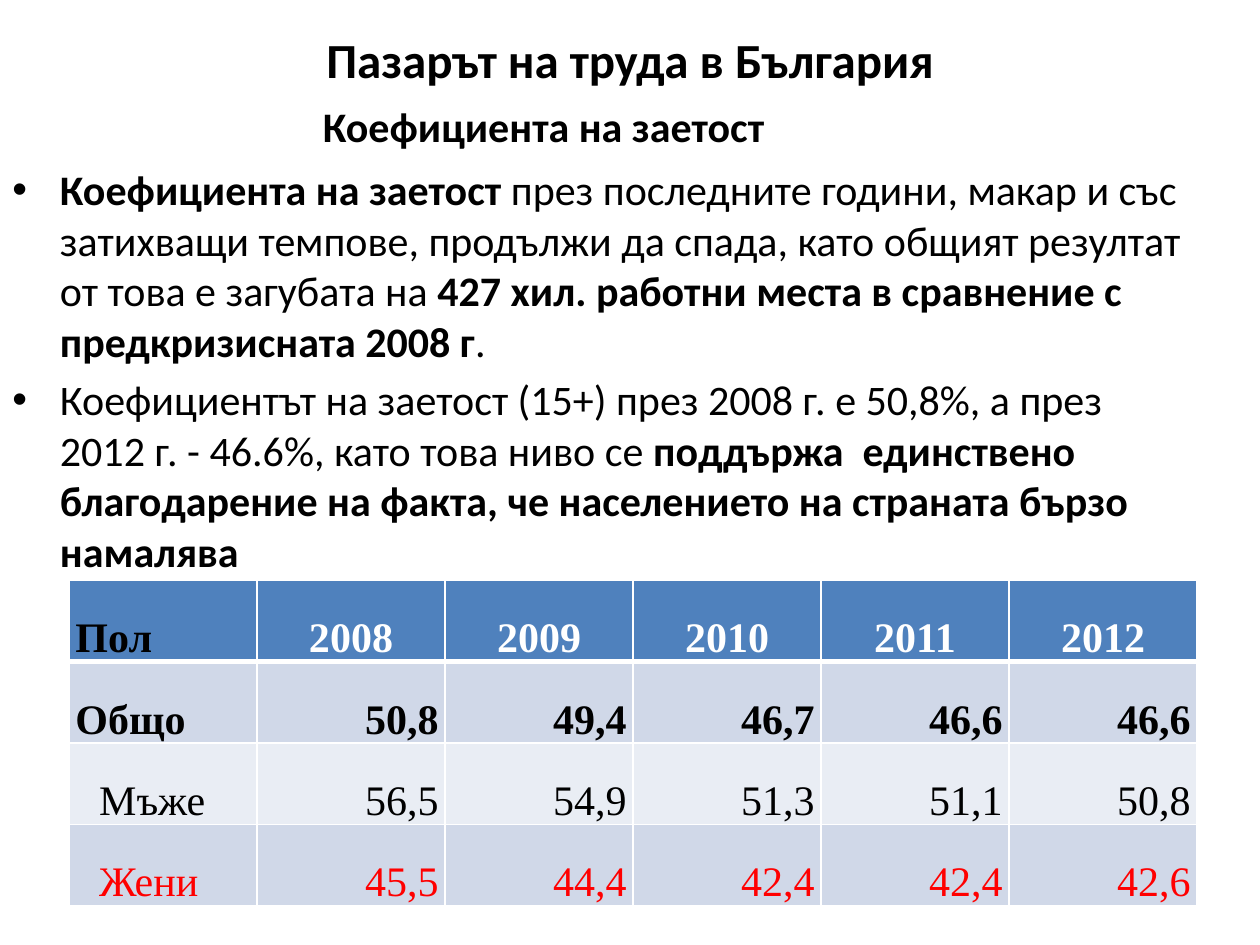
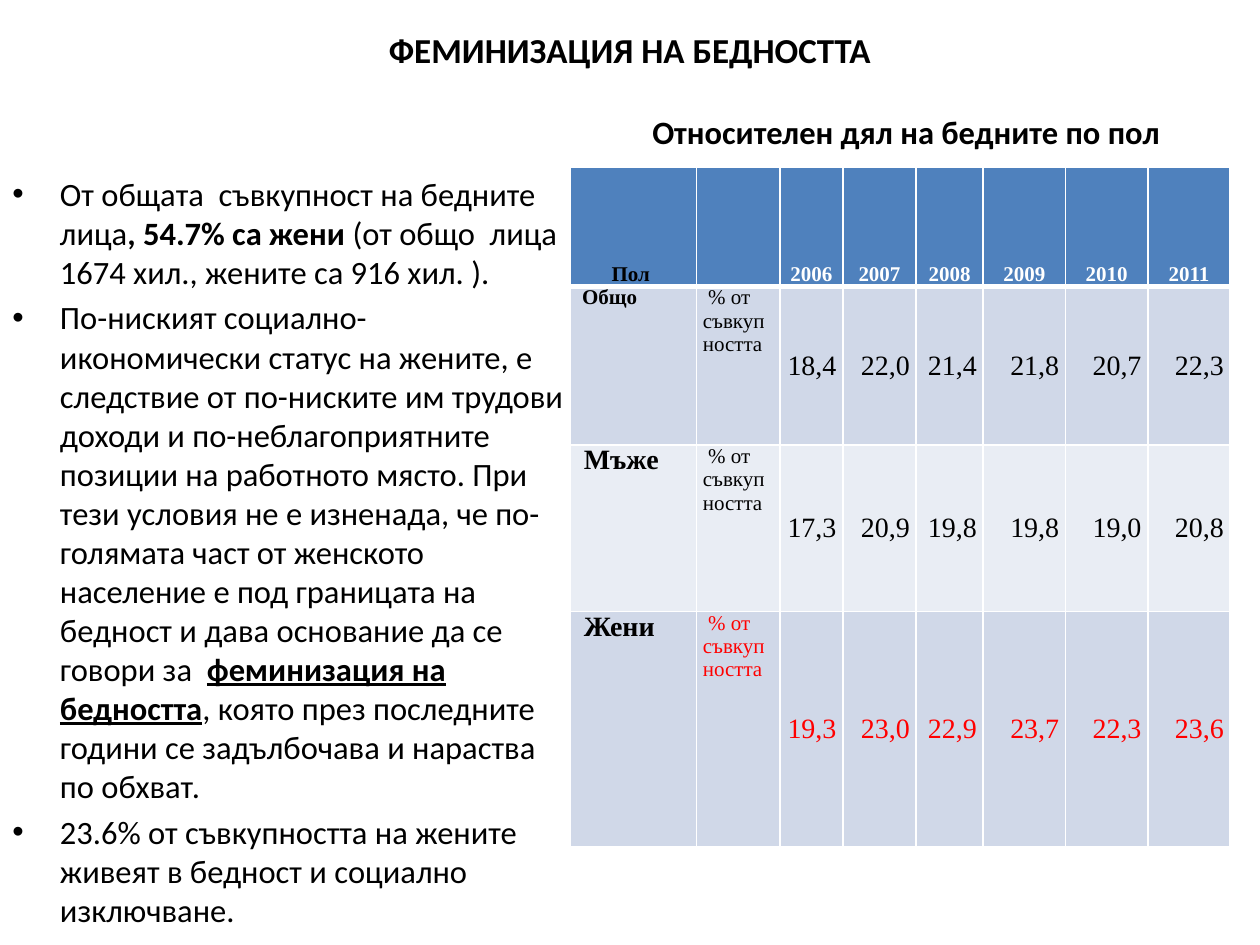
"""Build two slides on the Bulgarian labour market and poverty by sex."""
from dataclasses import dataclass

from lxml.etree import SubElement
from pptx import Presentation
from pptx.dml.color import RGBColor
from pptx.enum.text import MSO_ANCHOR, PP_ALIGN
from pptx.oxml.ns import qn
from pptx.util import Cm, Pt


@dataclass(frozen=True)
class Theme:
    text: RGBColor = RGBColor(0, 0, 0)
    header_text: RGBColor = RGBColor(255, 255, 255)
    women: RGBColor = RGBColor(255, 0, 0)
    header_fill: RGBColor = RGBColor(0x4F, 0x81, 0xBD)
    bands: tuple = (RGBColor(0xE9, 0xED, 0xF4), RGBColor(0xD0, 0xD8, 0xE8))
    border: str = "FFFFFF"
    text_font: str = "Calibri"
    table_font: str = "Times New Roman"
    title: float = 28
    large: float = 24
    small_title: float = 20
    medium: float = 18.6
    figures: float = 16
    labels: float = 12


theme = Theme()


def add_text(slide, box, size, paragraphs, anchor=MSO_ANCHOR.TOP,
             align=PP_ALIGN.LEFT, before=0, bulleted=False):
    frame = slide.shapes.add_textbox(*map(Cm, box)).text_frame
    frame.word_wrap = True
    frame.vertical_anchor = anchor
    for index, pieces in enumerate(paragraphs):
        paragraph = frame.add_paragraph() if index else frame.paragraphs[0]
        paragraph.alignment = align
        paragraph.space_before = Pt(before)
        for words, style in pieces:
            run = paragraph.add_run()
            run.text = words
            run.font.name, run.font.size = theme.text_font, Pt(size)
            run.font.color.rgb = theme.text
            run.font.bold = "b" in style
            run.font.underline = "u" in style
        if bulleted:
            properties = paragraph._p.get_or_add_pPr()
            properties.set("marL", str(Cm(0.96)))
            properties.set("indent", str(-Cm(0.96)))
            SubElement(properties, qn("a:buFont"), typeface="Arial")
            SubElement(properties, qn("a:buChar"), char="•")


def add_grid(slide, left, top, widths, heights, rows, size):
    grid = slide.shapes.add_table(len(rows), len(widths), Cm(left), Cm(top),
                                  Cm(sum(widths)), Cm(sum(heights))).table
    for column, width in zip(grid.columns, widths):
        column.width = Cm(width)
    for r, (values, height) in enumerate(zip(rows, heights)):
        grid.rows[r].height = Cm(height)
        for c, value in enumerate(values):
            cell = grid.cell(r, c)
            cell.margin_left = cell.margin_right = Cm(0.13)
            cell.margin_top = cell.margin_bottom = 0
            cell.vertical_anchor = MSO_ANCHOR.BOTTOM
            for side in ("L", "R", "T", "B"):
                under_header = (r, side) in ((0, "B"), (1, "T"))
                line = SubElement(cell._tc.get_or_add_tcPr(), qn(f"a:ln{side}"),
                                  w=str(Pt(3 if under_header else 1)))
                fill = SubElement(line, qn("a:solidFill"))
                SubElement(fill, qn("a:srgbClr"), val=theme.border)
            cell.fill.solid()
            cell.fill.fore_color.rgb = theme.bands[r % 2] if r else theme.header_fill
            cell.text_frame.text = value
            paragraph = cell.text_frame.paragraphs[0]
            if c:
                paragraph.alignment = PP_ALIGN.RIGHT if r else PP_ALIGN.CENTER
            for run in paragraph.runs:
                run.font.name, run.font.size = theme.table_font, Pt(size)
                run.font.bold = r == 0
                run.font.color.rgb = theme.text if r or not c else theme.header_text
    return grid


deck = Presentation()
deck.slide_width, deck.slide_height = Cm(25.4), Cm(19.05)
blank = deck.slide_layouts[6]

employment = deck.slides.add_slide(blank)
add_text(employment, (1.27, 0, 22.86, 2.39), theme.title,
         [[("Пазарът на труда в България", "b")]],
         MSO_ANCHOR.MIDDLE, PP_ALIGN.CENTER)
add_text(employment, (1.27, 1.98, 19.38, 1.19), theme.large,
         [[("Коефициента на заетост", "b")]],
         MSO_ANCHOR.BOTTOM, PP_ALIGN.CENTER, before=4.8)
add_text(employment, (0, 3.18, 24.21, 8.33), theme.large, [
    [("Коефициента на заетост", "b"),
     (" през последните години, макар и със затихващи темпове, продължи да спада, "
      "като общият резултат от това е загубата на ", ""),
     ("427 хил. работни места в сравнение с предкризисната 2008 г", "b"),
     (".", "")],
    [("Коефициентът на заетост (15+) през 2008 г. е 50,8%, а през 2012 г. - 46.6%, "
      "като това ниво се ", ""),
     ("поддържа  единствено благодарение на факта, че населението на страната "
      "бързо намалява", "b")],
], before=4.8, bulleted=True)

employment_rates = add_grid(employment, 1.39, 11.7, [3.79] * 6, [1.64] * 4, [
    ("Пол", "2008", "2009", "2010", "2011", "2012"),
    ("Общо", "50,8", "49,4", "46,7", "46,6", "46,6"),
    ("Мъже", "56,5", "54,9", "51,3", "51,1", "50,8"),
    ("Жени", "45,5", "44,4", "42,4", "42,4", "42,6"),
], theme.large)
for c in range(6):
    employment_rates.cell(1, c).text_frame.paragraphs[0].runs[0].font.bold = True
    women_rate = employment_rates.cell(3, c).text_frame.paragraphs[0].runs[0]
    women_rate.font.color.rgb = theme.women
for r in (2, 3):
    sex = employment_rates.cell(r, 0).text_frame.paragraphs[0]
    sex._p.get_or_add_pPr().set("indent", str(Cm(0.48)))

poverty = deck.slides.add_slide(blank)
add_text(poverty, (1.27, 0, 22.86, 1.98), theme.small_title,
         [[("ФЕМИНИЗАЦИЯ НА БЕДНОСТТА", "b")]],
         MSO_ANCHOR.MIDDLE, PP_ALIGN.CENTER)
add_text(poverty, (0, 3.38, 11.64, 14.48), theme.medium, [
    [("От общата  съвкупност на бедните лица", ""),
     (", 54.7% са жени", "b"),
     (" (от общо  лица 1674 хил., жените са 916 хил. ).", "")],
    [("По-ниският социално-икономически статус на жените, е следствие от по-ниските "
      "им трудови доходи и по-неблагоприятните позиции на работното място. При тези "
      "условия не е изненада, че по-голямата част от женското население е под "
      "границата на бедност и дава основание да се говори за  ", ""),
     ("феминизация на бедността", "bu"),
     (", която през последните  години се задълбочава и нараства по обхват.", "")],
    [("23.6% от съвкупността на жените живеят в бедност и социално изключване.", "")],
], before=3.7, bulleted=True)
add_text(poverty, (12.9, 1.98, 11.23, 1.19), theme.medium,
         [[("Относителен дял на бедните по пол", "b")]],
         MSO_ANCHOR.BOTTOM, before=3.7)

share = " % от съвкупността"
poverty_shares = add_grid(
    poverty, 11.5, 3.38, [2.54, 1.68, 1.27, 1.48, 1.35, 1.66, 1.66, 1.66],
    [2.39, 3.2, 3.36, 4.73], [
        ("Пол ", "", "2006", "2007", "2008", "2009", "2010", "2011"),
        (" Общо", share, "18,4", "22,0", "21,4", "21,8", "20,7", "22,3"),
        (" Мъже", share, "17,3", "20,9", "19,8", "19,8", "19,0", "20,8"),
        (" Жени", share, "19,3", "23,0", "22,9", "23,7", "22,3", "23,6"),
    ], theme.labels)
poverty_shares.cell(0, 0).text_frame.paragraphs[0].alignment = PP_ALIGN.CENTER
for r in (1, 2, 3):
    for c in range(8):
        entry = poverty_shares.cell(r, c)
        paragraph = entry.text_frame.paragraphs[0]
        font = paragraph.runs[0].font
        font.bold = c == 0
        if c > 1:
            entry.vertical_anchor = MSO_ANCHOR.MIDDLE
        else:
            entry.vertical_anchor = MSO_ANCHOR.TOP
            paragraph.alignment = PP_ALIGN.LEFT
        if c > 1 or (c == 0 and r > 1):
            font.size = Pt(theme.figures)
        if r == 3 and c:
            font.color.rgb = theme.women

deck.save("out.pptx")
